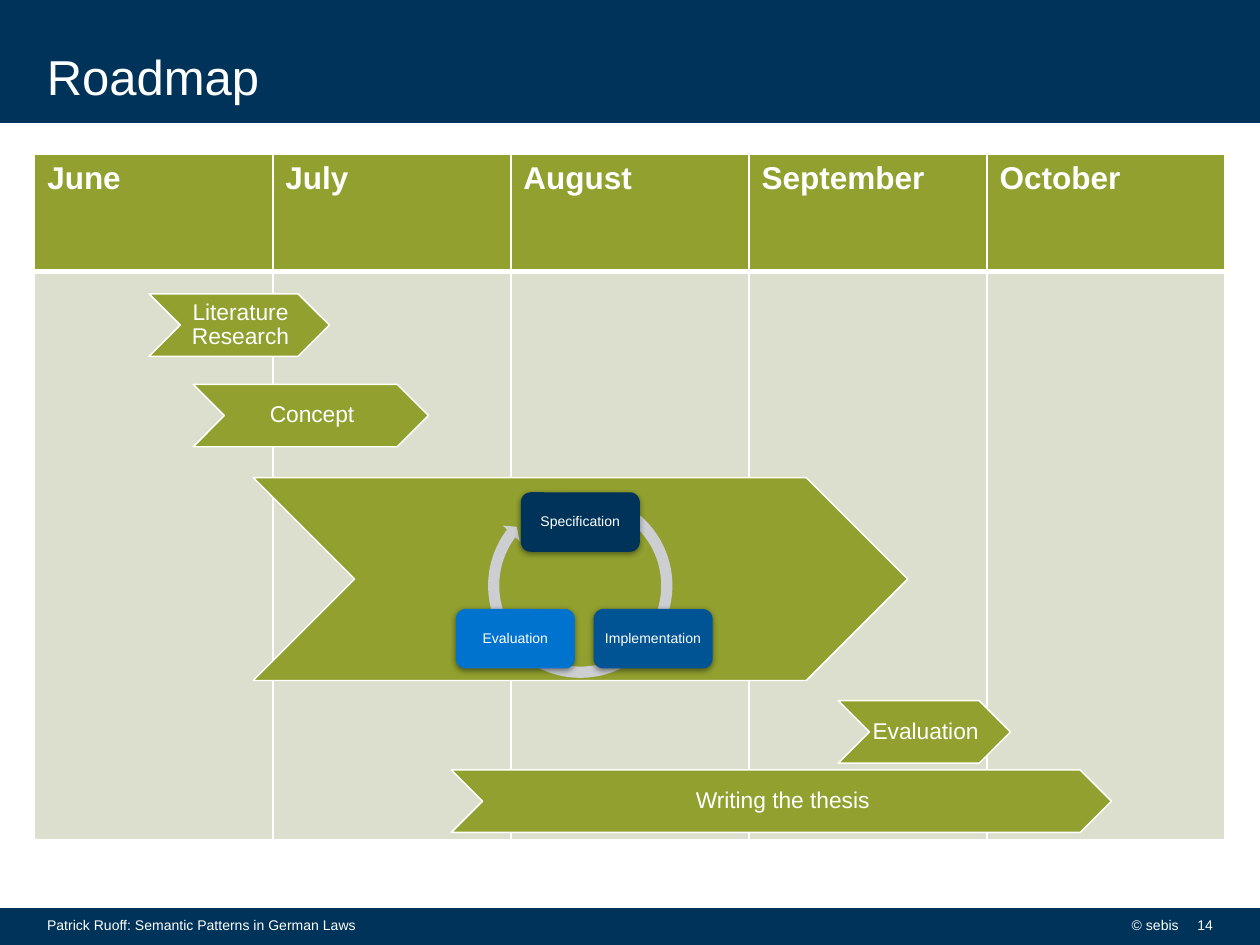
from lxml import etree
from pptx import Presentation
from pptx import util as u
from pptx.dml.color import RGBColor
from pptx.enum import shapes, text
from pptx.oxml import ns

NAVY = RGBColor(0x00, 0x33, 0x59)
BLUE = RGBColor(0x00, 0x54, 0x94)
BRIGHT_BLUE = RGBColor(0x00, 0x73, 0xCF)
OLIVE = RGBColor(0x91, 0xA0, 0x2F)
PALE_OLIVE = RGBColor(0xDC, 0xDF, 0xCD)
GREY = RGBColor(0xCC, 0xCE, 0xD1)
WHITE = RGBColor(0xFF, 0xFF, 0xFF)
BLACK = RGBColor(0x00, 0x00, 0x00)

SHAPE = shapes.MSO_SHAPE
ALIGN = text.PP_ALIGN
ANCHOR = text.MSO_ANCHOR


def write(frame, words, size, align=ALIGN.LEFT, bold=False, spacing=None):
    paragraph = frame.paragraphs[0]
    paragraph.alignment = align
    if spacing:
        paragraph.line_spacing = spacing
    run = paragraph.add_run()
    run.text = words
    run.font.name = "Arial"
    run.font.size = u.Pt(size)
    run.font.bold = bold
    run.font.color.rgb = WHITE


def fit(frame, insets, anchor):
    """Set the insets (left, top, right, bottom) and anchor, and wrap."""
    (frame.margin_left, frame.margin_top,
     frame.margin_right, frame.margin_bottom) = map(u.Pt, insets)
    frame.vertical_anchor = anchor
    frame.word_wrap = True


def add_xml(parent, tag, **attributes):
    return etree.SubElement(parent, ns.qn(tag), attributes)


def add_colour(parent, colour):
    return add_xml(parent, "a:srgbClr", val=str(colour))


class RoadmapSlide:
    def __init__(self, slide):
        self.shapes = slide.shapes

    def shape(self, kind, box, fill, line=None, line_width=0.85):
        item = self.shapes.add_shape(kind, *map(u.Pt, box))
        item.shadow.inherit = False
        item.fill.solid()
        item.fill.fore_color.rgb = fill
        if line is None:
            item.line.fill.background()
        else:
            item.line.color.rgb = line
            item.line.width = u.Pt(line_width)
        return item

    def label(self, box, words, size, align=ALIGN.LEFT, anchor=ANCHOR.MIDDLE,
              insets=(7.2, 3.6, 7.2, 3.6)):
        frame = self.shapes.add_textbox(*map(u.Pt, box)).text_frame
        fit(frame, insets, anchor)
        write(frame, words, size, align)

    def phase(self, box, words=None):
        chevron = self.shape(SHAPE.CHEVRON, box, OLIVE, WHITE)
        if words:
            fit(chevron.text_frame, (1.4, 0.7, 0, 0.7), ANCHOR.MIDDLE)
            write(chevron.text_frame, words, 13, ALIGN.CENTER, spacing=0.9)

    def cycle_arrow(self, box):
        arrow = self.shape(SHAPE.CIRCULAR_ARROW, box, GREY)
        for i, value in enumerate((0.057, 3.405, 130.27, 178.541, 0.059)):
            arrow.adjustments[i] = value

    def cycle_step(self, left, top, words, fill):
        step = self.shape(SHAPE.ROUNDED_RECTANGLE, (left, top, 68, 34), fill)
        effects = step.element.spPr.find(ns.qn("a:effectLst"))
        shadow = add_xml(effects, "a:outerShdw", blurRad=str(u.Pt(3.5)),
                         dist=str(u.Pt(1.1)), dir="5400000", rotWithShape="0")
        add_xml(add_colour(shadow, BLACK), "a:alpha", val="45000")
        fit(step.text_frame, (2, 2, 2, 2), ANCHOR.MIDDLE)
        write(step.text_frame, words, 8, ALIGN.CENTER, spacing=0.9)

    def cell(self, cell, fill, **borders):
        properties = cell._tc.get_or_add_tcPr()
        for side in "LRTB":
            line = add_xml(properties, f"a:ln{side}", w=str(u.Pt(borders.get(side, 1))))
            add_colour(add_xml(line, "a:solidFill"), WHITE)
        cell.fill.solid()
        cell.fill.fore_color.rgb = fill

    def calendar(self, left, top, months, column_width, row_heights):
        table = self.shapes.add_table(
            2, len(months), u.Pt(left), u.Pt(top),
            u.Pt(column_width * len(months)), u.Pt(sum(row_heights))).table
        for row, height in zip(table.rows, row_heights):
            row.height = u.Pt(height)
        for i, month in enumerate(months):
            table.columns[i].width = u.Pt(column_width)
            header, body = table.cell(0, i), table.cell(1, i)
            self.cell(header, OLIVE, B=3)
            self.cell(body, PALE_OLIVE, T=3)
            write(header.text_frame, month, 18, bold=True)


def main():
    deck = Presentation()
    deck.slide_width, deck.slide_height = u.Pt(720), u.Pt(540)
    roadmap = RoadmapSlide(deck.slides.add_slide(deck.slide_layouts[6]))

    for top, height in ((519.4, 20.6), (0.7, 68.9)):
        roadmap.shape(SHAPE.RECTANGLE, (0, top, 720, height), NAVY, NAVY, 1.35)
    roadmap.label((19.7, 3.6, 593, 56.5), "Roadmap", 28, anchor=ANCHOR.BOTTOM,
                  insets=(7.2, 0, 7.2, 0))

    roadmap.calendar(19.8, 88.4, ("June", "July", "August", "September", "October"),
                     136.08, (66.9, 324.6))

    roadmap.label((554.4, 517.2, 126.3, 23), "© sebis", 8, ALIGN.RIGHT)
    roadmap.label((19.8, 517.2, 340.5, 23),
                  "Patrick Ruoff: Semantic Patterns in German Laws", 8)
    roadmap.label((680.4, 517.2, 19.8, 23), "14", 8, ALIGN.RIGHT,
                  insets=(0, 3.6, 7.2, 3.6))

    for left, top, width, words in (
            (110.4, 219.6, 134.4, "Concept"),
            (85.2, 167.9, 103, "Literature Research"),
            (479, 400.4, 98.4, "Evaluation"),
            (257.9, 440, 377.2, "Writing the thesis")):
        roadmap.phase((left, top, width, 35.7), words)
    roadmap.phase((144.7, 272.9, 374, 116))

    roadmap.cycle_arrow((275.5, 278.6, 112.2, 112.2))
    for left, top, words, fill in (
            (297.6, 281.3, "Specification", NAVY),
            (339.2, 348, "Implementation", BLUE),
            (260.5, 348, "Evaluation", BRIGHT_BLUE)):
        roadmap.cycle_step(left, top, words, fill)

    deck.save("out.pptx")


if __name__ == "__main__":
    main()
